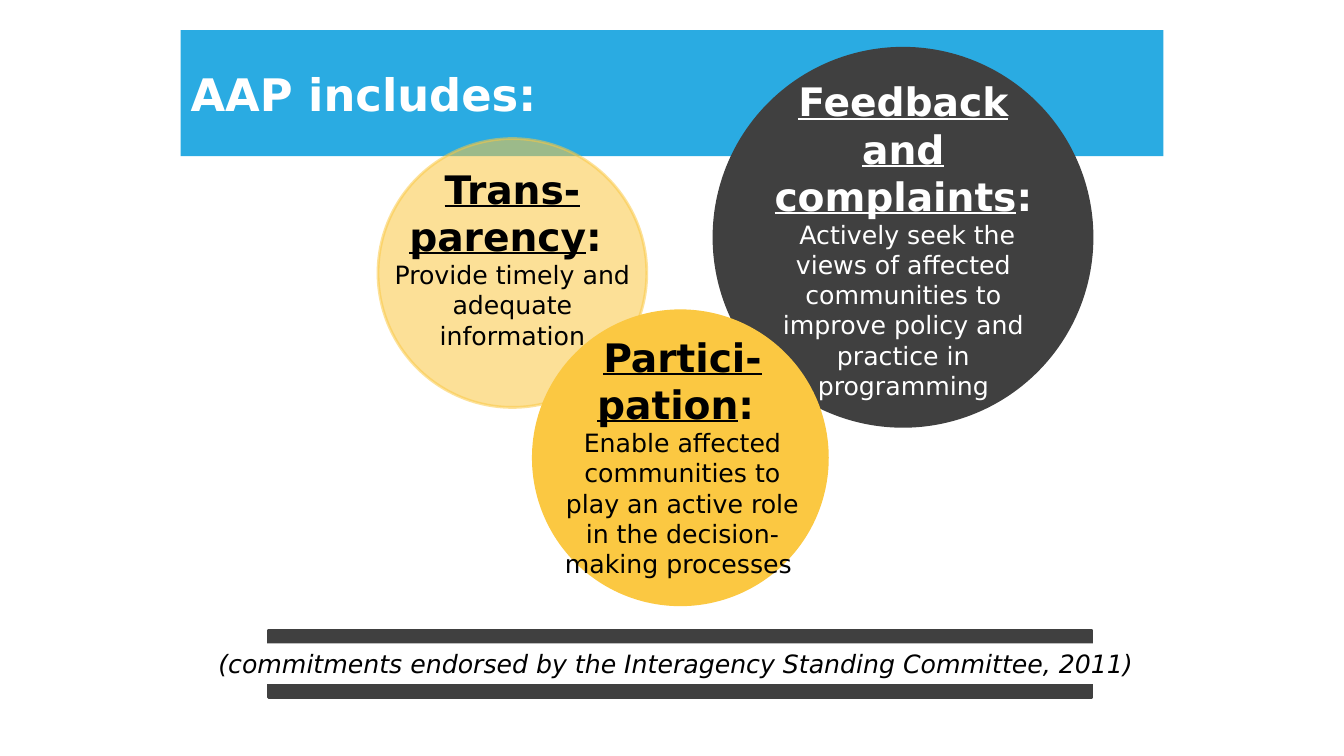
from dataclasses import dataclass
from typing import NamedTuple, Optional

from lxml.etree import SubElement
from pptx import Presentation
from pptx.dml.color import RGBColor as Rgb
from pptx.enum.shapes import MSO_SHAPE as Geometry
from pptx.enum.text import MSO_ANCHOR as Anchor, PP_ALIGN as Align
from pptx.oxml.ns import qn
from pptx.shapes.autoshape import Shape
from pptx.slide import Slide
from pptx.util import Pt


@dataclass(frozen=True)
class Theme:
    font: str = "DejaVu Sans"
    blue: Rgb = Rgb(0x2A, 0xAB, 0xE2)
    yellow: Rgb = Rgb(0xFB, 0xC8, 0x42)
    dark: Rgb = Rgb(0x40, 0x40, 0x40)
    white: Rgb = Rgb(0xFF, 0xFF, 0xFF)
    black: Rgb = Rgb(0, 0, 0)
    title_size: float = 32
    heading_size: float = 28
    body_size: float = 18
    outline: float = 2


THEME = Theme()


class Area(NamedTuple):
    left: float
    top: float
    width: float
    height: float

    def lengths(self) -> tuple[Pt, ...]:
        return tuple(Pt(value) for value in self)


@dataclass(frozen=True)
class Commitment:
    circle: Area
    text_area: Area
    heading: str
    ending: str
    body: str
    fill: Rgb
    ink: Rgb
    fill_opacity: int = 100
    line_opacity: int = 100


COMMITMENTS = [
    Commitment(Area(270, 99, 192, 192), Area(273, 114.5, 186, 163),
               "Trans-parency", ": ", "Provide timely and adequate information",
               THEME.yellow, THEME.black, 55, 53),
    Commitment(Area(510, 34.5, 270, 270), Area(539, 52, 212.5, 262),
               "Feedback and complaints", ":",
               " Actively seek the views of affected communities to improve "
               "policy and practice in programming",
               THEME.dark, THEME.white),
    Commitment(Area(381, 222, 210, 210), Area(396, 234.5, 183, 206),
               "Partici-pation", ": ",
               "Enable affected communities to play an active role in the "
               "decision-making processes ",
               THEME.yellow, THEME.black),
]


def set_opacity(shape: Shape, fill_percent: int, line_percent: int) -> None:
    properties = shape._element.spPr
    outline = properties.find(qn("a:ln"))
    for parent, percent in ((properties, fill_percent), (outline, line_percent)):
        if percent < 100:
            color = parent.find(qn("a:solidFill"))[0]
            SubElement(color, qn("a:alpha"), val=str(percent * 1000))


def add_filled(slide: Slide, geometry: Geometry, area: Area, fill: Rgb,
               line: Optional[Rgb] = None) -> Shape:
    shape = slide.shapes.add_shape(geometry, *area.lengths())
    shape.shadow.inherit = False
    shape.fill.solid()
    shape.fill.fore_color.rgb = fill
    if line is None:
        shape.line.fill.background()
    else:
        shape.line.color.rgb = line
        shape.line.width = Pt(THEME.outline)
    return shape


def style_paragraph(para, size: float, color: Rgb, align: Align = Align.CENTER,
                    bold: bool = False, italic: bool = False) -> None:
    para.alignment = align
    font = para.font
    font.name, font.size = THEME.font, Pt(size)
    font.bold, font.italic = bold, italic
    font.color.rgb = color


def add_banner(slide: Slide) -> None:
    banner = add_filled(slide, Geometry.RECTANGLE, Area(129, 21.6, 702, 90), THEME.blue)
    banner.text_frame.vertical_anchor = Anchor.MIDDLE
    para = banner.text_frame.paragraphs[0]
    para.text = "AAP includes:"
    style_paragraph(para, THEME.title_size, THEME.white, Align.LEFT, bold=True)


def add_source_note(slide: Slide) -> None:
    """Draw a white strip with the note across a dark block, leaving two bars."""
    add_filled(slide, Geometry.RECTANGLE, Area(192, 450, 588, 48), THEME.dark, THEME.dark)
    strip = add_filled(slide, Geometry.RECTANGLE, Area(90, 459.5, 780, 29), THEME.white)
    strip.text_frame.vertical_anchor = Anchor.TOP
    para = strip.text_frame.paragraphs[0]
    para.text = " (commitments endorsed by the Interagency Standing Committee, 2011)"
    style_paragraph(para, THEME.body_size, THEME.black, italic=True)


def add_commitment(slide: Slide, item: Commitment) -> None:
    circle = add_filled(slide, Geometry.OVAL, item.circle, item.fill, item.fill)
    set_opacity(circle, item.fill_opacity, item.line_opacity)
    box = slide.shapes.add_textbox(*item.text_area.lengths())
    frame = box.text_frame
    frame.word_wrap = True
    heading = frame.paragraphs[0]
    style_paragraph(heading, THEME.heading_size, item.ink, bold=True)
    for text, underlined in ((item.heading, True), (item.ending, False)):
        span = heading.add_run()
        span.text = text
        span.font.underline = underlined
    body = frame.add_paragraph()
    body.text = item.body
    style_paragraph(body, THEME.body_size, item.ink)


def main() -> None:
    deck = Presentation()
    deck.slide_width, deck.slide_height = Pt(960), Pt(540)
    page = deck.slides.add_slide(deck.slide_layouts[6])
    add_banner(page)
    add_source_note(page)
    for item in COMMITMENTS:
        add_commitment(page, item)
    deck.save("out.pptx")


if __name__ == "__main__":
    main()
